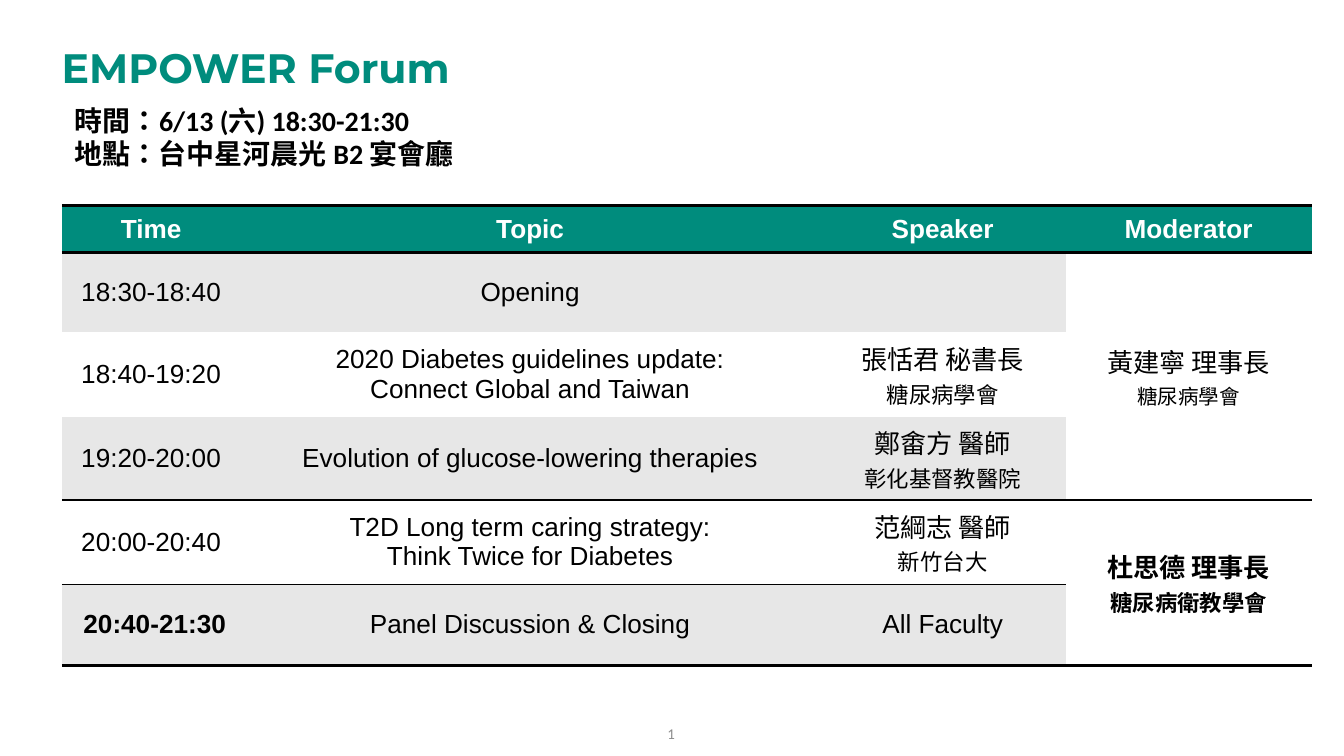
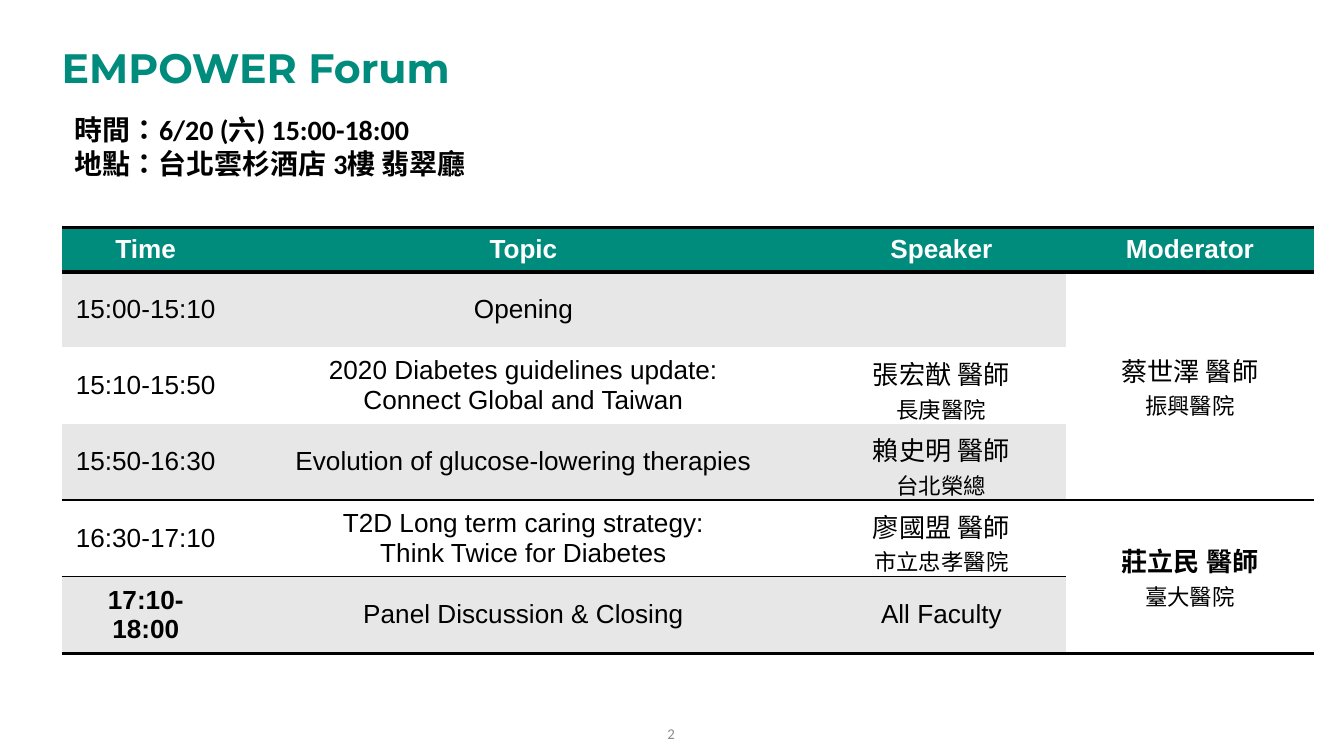
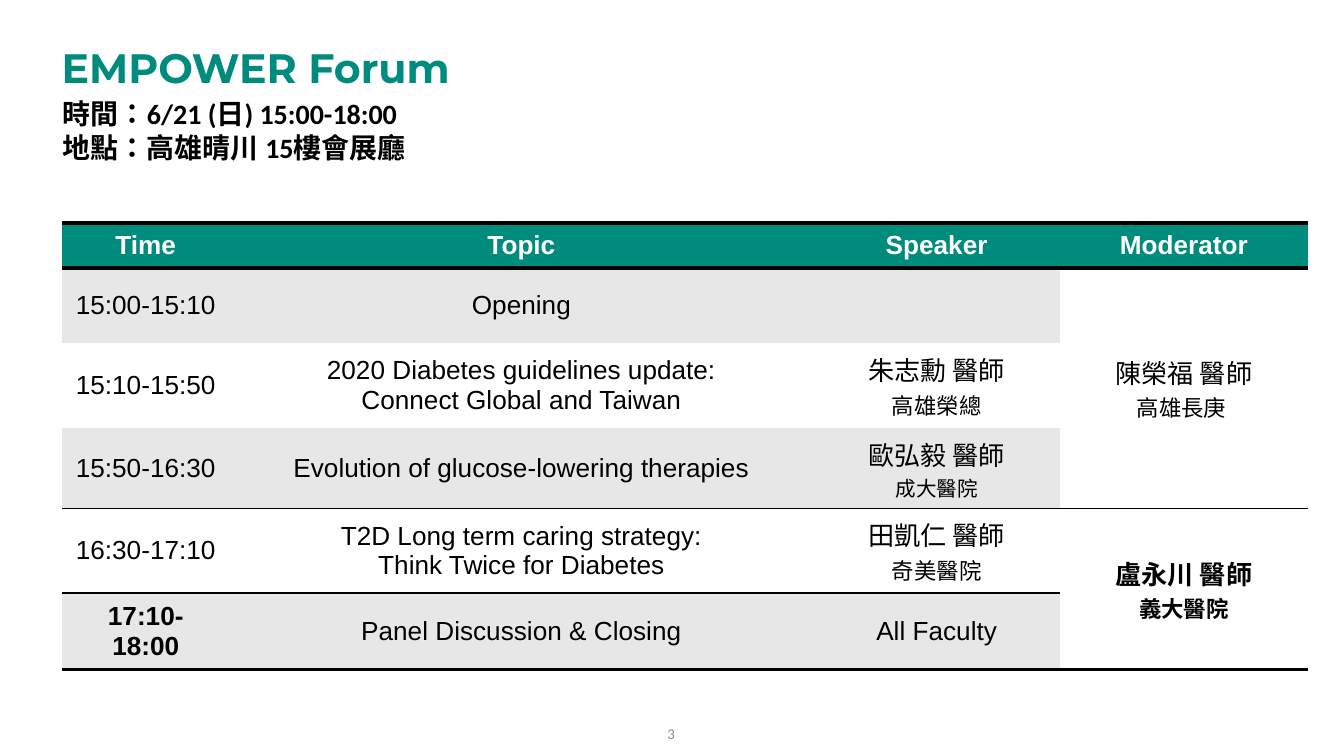
from lxml import etree
from pptx import Presentation
from pptx.dml.color import RGBColor
from pptx.enum import lang
from pptx.enum import text as t
from pptx.oxml import ns
from pptx.util import Inches, Pt

# Shared look
TEAL, BLACK, WHITE, BAND, GREY = "008C7D", "000000", "FFFFFF", "E7E7E7", "8C8C8C"
TABLE_FONT, BODY_FONT, TITLE_FONT = "Arial", "Calibri", "Montserrat"
LEFT = 0.46
NO_STYLE = "{2D5ABB26-0587-4C30-8999-92F81FD0307C}"

# Shared agenda
HEADERS = ["Time", "Topic", "Speaker", "Moderator"]
TOPICS = [
    ["Opening"],
    ["2020 Diabetes guidelines update:", "Connect Global and Taiwan"],
    ["Evolution of glucose-lowering therapies"],
    ["T2D Long term caring strategy:", "Think Twice for Diabetes"],
    ["Panel Discussion & Closing"],
]
MODERATOR_COL = len(HEADERS) - 1
MODERATOR_ROWS = [(1, 3), (4, 5)]
TOP_RULES = {0: 2, 4: 1}
BOTTOM_RULES = {0: 2, 3: 1, 4: 1, 5: 2}

AFTERNOON = ["15:00-15:10", "15:10-15:50", "15:50-16:30", "16:30-17:10", "17:10-18:00"]

# People are (name, affiliation, affiliation size, bold name, bold affiliation)
FORUMS = [
    dict(
        details=["時間：6/13 (六) 18:30-21:30", "地點：台中星河晨光 B2 宴會廳"],
        details_box=(LEFT, 0.72, 3.27, 0.61),
        top=1.53, cols=[1.33, 4.31, 1.83, 1.83],
        rows=[0.35, 0.59, 0.63, 0.62, 0.63, 0.6], speaker_bottom=0.05,
        times=["18:30-18:40", "18:40-19:20", "19:20-20:00", "20:00-20:40", " 20:40-21:30"],
        speakers=[("張恬君 秘書長", "糖尿病學會", 12), ("鄭畬方 醫師", "彰化基督教醫院", 12),
                  ("范綱志 醫師", "新竹台大", 12)],
        moderators=[("黃建寧 理事長", "糖尿病學會", 11),
                    ("杜思德 理事長", "糖尿病衛教學會", 12, True, True)],
    ),
    dict(
        details=["時間：6/20 (六) 15:00-18:00", "地點：台北雲杉酒店 3樓 翡翠廳"],
        details_box=(LEFT, 0.79, 3.57, 0.61),
        top=1.69, cols=[1.25, 4.37, 1.85, 1.85],
        rows=[0.33, 0.56, 0.56, 0.57, 0.57, 0.57], speaker_bottom=0, times=AFTERNOON,
        speakers=[("張宏猷 醫師", "長庚醫院", 12), ("賴史明 醫師", "台北榮總", 12),
                  ("廖國盟 醫師", "市立忠孝醫院", 12)],
        moderators=[("蔡世澤 醫師", "振興醫院", 12),
                    ("莊立民 醫師", "臺大醫院", 12, True, False)],
    ),
    dict(
        details=["時間：6/21 (日) 15:00-18:00", "地點：高雄晴川 15樓會展廳"],
        details_box=(0.37, 0.67, 3.03, 0.61),
        top=1.66, cols=[1.25, 4.34, 1.84, 1.84],
        rows=[0.33, 0.56, 0.63, 0.6, 0.63, 0.57], speaker_bottom=0.05, times=AFTERNOON,
        speakers=[("朱志勳 醫師", "高雄榮總", 12), ("歐弘毅 醫師", "成大醫院", 11),
                  ("田凱仁 醫師", "奇美醫院", 12)],
        moderators=[("陳榮福 醫師", "高雄長庚 ", 12),
                    ("盧永川 醫師", "義大醫院", 12, True, True)],
    ),
]


def color(hex_code):
    return RGBColor.from_string(hex_code)


def write_line(frame, index, words, size, font, ink, bold=False, align=t.PP_ALIGN.LEFT):
    paragraph = frame.paragraphs[0] if index == 0 else frame.add_paragraph()
    paragraph.alignment = align
    run = paragraph.add_run()
    run.text = words
    run.font.size = Pt(size)
    run.font.name = font
    run.font.bold = bold
    run.font.color.rgb = color(ink)
    return paragraph


def add_text_frame(slide, box, margins=None):
    frame = slide.shapes.add_textbox(*map(Inches, box)).text_frame
    frame.word_wrap = True
    if margins:
        (frame.margin_left, frame.margin_top,
         frame.margin_right, frame.margin_bottom) = map(Inches, margins)
    return frame


# Title, details and page number
def add_title(slide):
    frame = add_text_frame(slide, (LEFT, 0.14, 7.46, 0.76), (0, 0, 0.1, 0))
    frame.vertical_anchor = t.MSO_ANCHOR.MIDDLE
    write_line(frame, 0, "EMPOWER Forum", 22, TITLE_FONT, TEAL, True).line_spacing = 0.9


def add_details(slide, forum):
    frame = add_text_frame(slide, forum["details_box"])
    frame.auto_size = t.MSO_AUTO_SIZE.SHAPE_TO_FIT_TEXT
    for index, detail in enumerate(forum["details"]):
        line = write_line(frame, index, detail, 15, BODY_FONT, BLACK, True)
        line.runs[0].font.language_id = lang.MSO_LANGUAGE_ID.TRADITIONAL_CHINESE


def add_page_number(slide, number):
    frame = add_text_frame(slide, (3.83, 5.39, 2.33, 0.18), (0.1, 0, 0.1, 0))
    write_line(frame, 0, str(number), 8, BODY_FONT, GREY, align=t.PP_ALIGN.CENTER)


# Agenda table
def fill_cell(cell, fill):
    if fill:
        cell.fill.solid()
        cell.fill.fore_color.rgb = color(fill)
    else:
        cell.fill.background()


def rule_cell(cell, top, bottom):
    """Add the top and bottom rules, which precede the fill in the cell properties."""
    properties = cell._tc.get_or_add_tcPr()
    edges = [(tag, width) for tag, width in (("a:lnT", top), ("a:lnB", bottom)) if width]
    for position, (tag, width) in enumerate(edges):
        edge = etree.Element(ns.qn(tag), w=str(Pt(width)))
        solid = etree.SubElement(edge, ns.qn("a:solidFill"))
        etree.SubElement(solid, ns.qn("a:srgbClr"), val=BLACK)
        properties.insert(position, edge)


def write_cell(cell, lines, ink=BLACK, bold=False):
    cell.vertical_anchor = t.MSO_ANCHOR.MIDDLE
    for index, line in enumerate(lines):
        write_line(cell.text_frame, index, line, 14, TABLE_FONT, ink, bold, t.PP_ALIGN.CENTER)


def write_person(cell, name, affiliation, size, bold_name=False, bold_affiliation=False):
    write_cell(cell, [name], bold=bold_name)
    write_line(cell.text_frame, 1, affiliation, size, TABLE_FONT, BLACK,
               bold_affiliation, t.PP_ALIGN.CENTER)


def style_agenda(agenda):
    last_rows = dict(MODERATOR_ROWS)
    for row in range(len(agenda.rows)):
        for col in range(len(HEADERS)):
            cell = agenda.cell(row, col)
            bottom = BOTTOM_RULES.get(row)
            fill = TEAL if row == 0 else BAND if row % 2 else WHITE
            if col == MODERATOR_COL and row:
                fill = None if row <= MODERATOR_ROWS[0][1] else WHITE
                bottom = BOTTOM_RULES[last_rows[row]] if row in last_rows else (
                    bottom if row in last_rows.values() else None)
            fill_cell(cell, fill)
            rule_cell(cell, TOP_RULES.get(row), bottom)


def add_agenda(slide, forum):
    cols, rows = forum["cols"], forum["rows"]
    frame = slide.shapes.add_table(len(rows), len(cols), Inches(LEFT), Inches(forum["top"]),
                                   Inches(sum(cols)), Inches(sum(rows)))
    agenda = frame.table
    agenda.first_row = agenda.horz_banding = False
    agenda._tbl.tblPr.find(ns.qn("a:tableStyleId")).text = NO_STYLE
    for column, width in zip(agenda.columns, cols):
        column.width = Inches(width)
    for row, height in zip(agenda.rows, rows):
        row.height = Inches(height)
    style_agenda(agenda)

    for col, header in enumerate(HEADERS):
        write_cell(agenda.cell(0, col), [header], WHITE, True)
    for row, (time, topic) in enumerate(zip(forum["times"], TOPICS), 1):
        write_cell(agenda.cell(row, 0), [time], bold=row == len(TOPICS))
        write_cell(agenda.cell(row, 1), topic)
    for row, speaker in enumerate(forum["speakers"], 2):
        speaker_cell = agenda.cell(row, 2)
        speaker_cell.margin_bottom = Inches(forum["speaker_bottom"])
        write_person(speaker_cell, *speaker)
    write_cell(agenda.cell(len(TOPICS), 2), ["All Faculty"])
    for (first, last), moderator in zip(MODERATOR_ROWS, forum["moderators"]):
        moderator_cell = agenda.cell(first, MODERATOR_COL)
        moderator_cell.merge(agenda.cell(last, MODERATOR_COL))
        write_person(moderator_cell, *moderator)


def main():
    deck = Presentation()
    deck.slide_width = Inches(10)
    deck.slide_height = Inches(10 * 9 / 16)
    for number, forum in enumerate(FORUMS, 1):
        slide = deck.slides.add_slide(deck.slide_layouts[6])
        add_page_number(slide, number)
        add_title(slide)
        add_agenda(slide, forum)
        add_details(slide, forum)
    deck.save("out.pptx")


if __name__ == "__main__":
    main()
